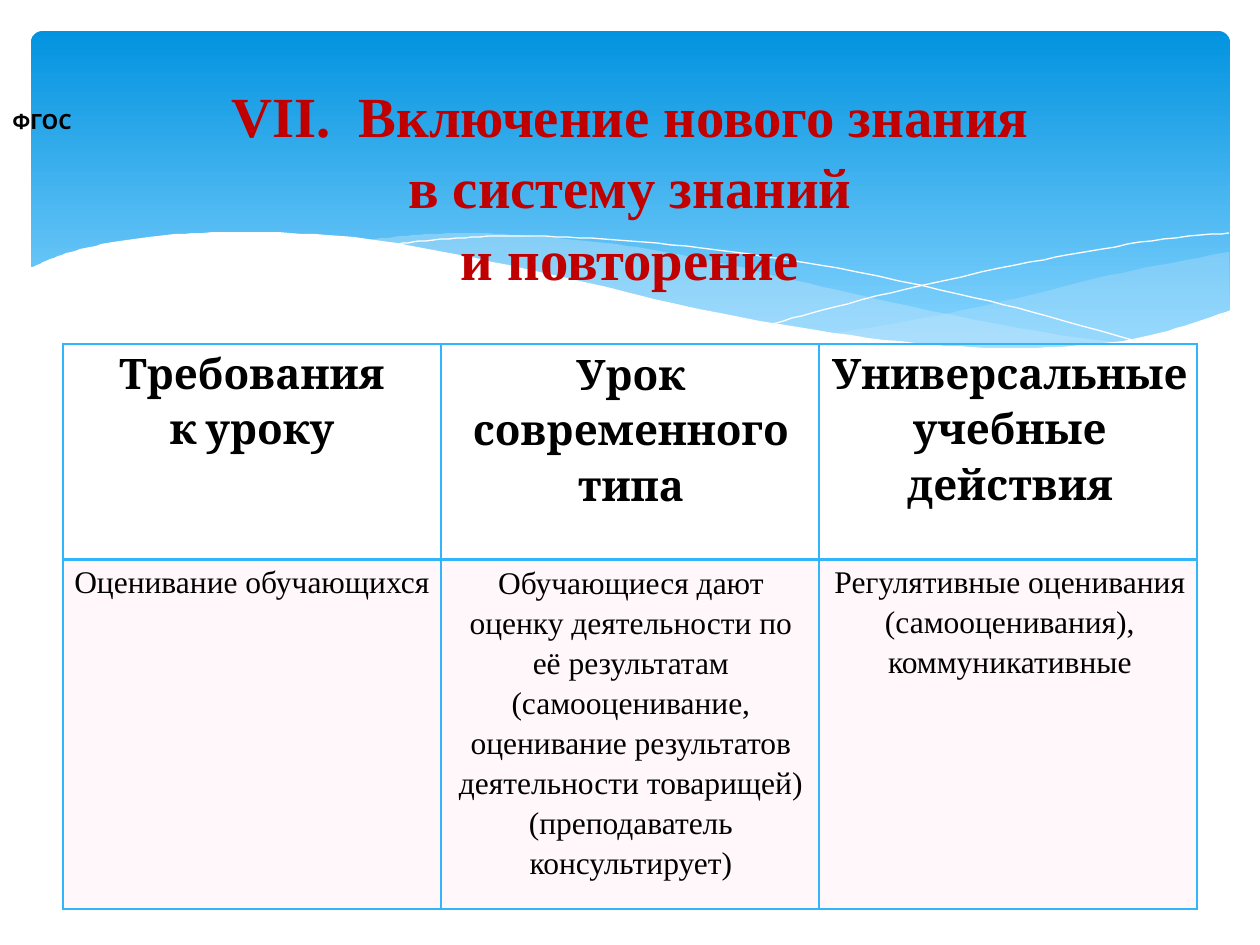
from lxml import etree
from pptx import Presentation
from pptx import util as u
from pptx.dml.color import RGBColor
from pptx.enum import shapes, text
from pptx.oxml import ns

PX = 7257
STEPS = 6
rgb = RGBColor.from_string


def smooth(points):
    padded = [points[0], *points, points[-1]]
    curve = [points[0]]
    for a, b, c, d in zip(padded, padded[1:], padded[2:], padded[3:]):
        for step in range(1, STEPS + 1):
            t = step / STEPS
            curve.append(tuple(
                (2 * q + (r - p) * t + (2 * p - 5 * q + 4 * r - s) * t ** 2
                 + (3 * q - p - 3 * r + s) * t ** 3) / 2
                for p, q, r, s in zip(a, b, c, d)))
    return curve


def set_opacity(fill_parent, percent):
    color = fill_parent.find(ns.qn("a:solidFill")).find(ns.qn("a:srgbClr"))
    etree.SubElement(color, ns.qn("a:alpha"), val=str(percent * 1000))


prs = Presentation()
prs.slide_width, prs.slide_height = 1260 * PX, 945 * PX
slide = prs.slides.add_slide(prs.slide_layouts[5])

banner = slide.shapes.add_shape(
    shapes.MSO_SHAPE.ROUNDED_RECTANGLE, 31 * PX, 31 * PX, 1199 * PX, 340 * PX)
banner.adjustments[0] = 0.034
banner.shadow.inherit = False
banner.line.fill.background()
banner.fill.gradient()
banner.fill.gradient_angle = 270
for stop, (position, color) in zip(banner.fill.gradient_stops,
                                   [(0, "0293E0"), (0.9, "83D3FE")]):
    stop.position = position
    stop.color.rgb = rgb(color)

right_wave = [
    [(1229, 252), (1160, 265), (1085, 281), (1014, 299), (919, 319), (833, 334)],
    [(833, 334), (906, 343), (969, 348), (1026, 350), (1089, 348), (1141, 342),
     (1187, 331), (1213, 318), (1230, 311)],
]
middle_wave = [
    [(1125, 344), (1018, 328), (890, 302), (793, 280), (717, 262), (648, 249),
     (586, 241), (529, 236), (479, 233), (433, 234), (394, 237), (360, 241)],
    [(360, 241), (431, 251), (509, 266), (566, 280), (668, 302), (757, 321),
     (838, 335), (911, 345), (974, 349), (1031, 350), (1080, 348), (1125, 344)],
]
falling_line = [
    [(389, 246), (413, 242), (457, 238), (505, 236), (567, 237), (643, 242),
     (733, 252), (838, 268), (958, 294), (1047, 316), (1143, 343)],
]
rising_line = [
    [(772, 324), (823, 310), (907, 289), (1016, 265), (1091, 251), (1164, 239),
     (1229, 233)],
]
white_wave = [
    [(1231, 310), (1184, 326), (1133, 339), (1071, 346), (999, 348), (915, 343),
     (816, 330), (699, 309), (563, 277), (460, 255), (368, 239), (290, 233),
     (223, 232), (166, 235), (120, 241), (85, 248), (58, 256), (37, 265), (29, 268)],
    [(29, 415)],
    [(1231, 415)],
]
for edges, color, opacity in [
    (right_wave, "C6E7FC", 29),
    (middle_wave, "C6E7FC", 40),
    (falling_line, "FFFFFF", None),
    (rising_line, "FFFFFF", None),
    (white_wave, "FFFFFF", 100),
]:
    outline = [point for edge in edges for point in smooth(edge)]
    builder = slide.shapes.build_freeform(*outline[0], scale=PX)
    builder.add_line_segments(outline[1:], close=opacity is not None)
    wave = builder.convert_to_shape()
    wave.shadow.inherit = False
    if opacity is None:
        wave.fill.background()
        wave.line.color.rgb = rgb(color)
        wave.line.width = 0
    else:
        wave.fill.solid()
        wave.fill.fore_color.rgb = rgb(color)
        set_opacity(wave._element.spPr, opacity)
        wave.line.fill.background()

standard = slide.shapes.add_textbox(0, 98 * PX, 88 * PX, 47 * PX)
standard.text_frame.word_wrap = True
standard.text_frame.vertical_anchor = text.MSO_ANCHOR.MIDDLE
standard.text_frame.text = "ФГОС"
label = standard.text_frame.paragraphs[0].runs[0].font
label.name, label.size, label.bold = "Cabin", u.Pt(12), True
label.color.rgb = rgb("000000")

rows = [
    ["Требования\nк уроку", "Урок\nсовременного типа",
     "Универсальные\nучебные действия"],
    ["Оценивание обучающихся",
     "Обучающиеся дают оценку деятельности по её результатам (самооценивание, "
     "оценивание результатов деятельности товарищей) (преподаватель консультирует)",
     "Регулятивные оценивания (самооценивания), коммуникативные"],
]
row_fonts = [("Cambria", 24, True), ("Times New Roman", 18, False)]
row_heights = [216, 349]
row_borders = [{"L": 1, "R": 1, "T": 1, "B": 2}, {"L": 1, "R": 1, "T": 2, "B": 1}]
column_layout = [(0, 0, 0), (9, 1, 2), (0, 0, 4)]

requirements = slide.shapes.add_table(
    2, 3, 63 * PX, 344 * PX, 1134 * PX, sum(row_heights) * PX).table
requirements.first_row = requirements.horz_banding = False
for column in requirements.columns:
    column.width = 378 * PX
for r, (contents, height) in enumerate(zip(rows, row_heights)):
    requirements.rows[r].height = height * PX
    name, size, bold = row_fonts[r]
    for c, (content, (side, top, indent)) in enumerate(zip(contents, column_layout)):
        cell = requirements.cell(r, c)
        cell.margin_left = cell.margin_right = side * PX
        cell.margin_top, cell.margin_bottom = top * PX, 0
        cell.text_frame.text = content
        for paragraph in cell.text_frame.paragraphs:
            paragraph.alignment = text.PP_ALIGN.CENTER
            paragraph.line_spacing = 1.15
            paragraph._p.get_or_add_pPr().set("marL", str(indent * PX))
            font = paragraph.runs[0].font
            font.name, font.size, font.bold = name, u.Pt(size), bold
            font.color.rgb = rgb("000000")
        properties = cell._tc.get_or_add_tcPr()
        for edge, width in row_borders[r].items():
            border = etree.SubElement(
                properties, ns.qn(f"a:ln{edge}"), w=str(u.Pt(width)))
            paint = etree.SubElement(border, ns.qn("a:solidFill"))
            etree.SubElement(paint, ns.qn("a:srgbClr"), val="31B6FD")
        if r == 0:
            cell.fill.background()
        else:
            cell.fill.solid()
            cell.fill.fore_color.rgb = rgb("FFD7E8")
            set_opacity(properties, 20)

title = slide.shapes.title
slide.shapes._spTree.append(title._element)
title.left, title.top, title.width, title.height = 63 * PX, 142 * PX, 1134 * PX, 147 * PX
heading = title.text_frame
heading.auto_size = text.MSO_AUTO_SIZE.NONE
heading.vertical_anchor = text.MSO_ANCHOR.MIDDLE
heading.margin_top, heading.margin_bottom = 6 * PX, 68 * PX
heading.text = "VII.  Включение нового знания\vв систему знаний\vи повторение"
heading.paragraphs[0].alignment = text.PP_ALIGN.CENTER
heading.paragraphs[0].line_spacing = 1.05
for run in heading.paragraphs[0].runs:
    run.font.name, run.font.size, run.font.bold = "Times New Roman", u.Pt(32.4), True
    run.font.color.rgb = rgb("C00000")

prs.save("out.pptx")
